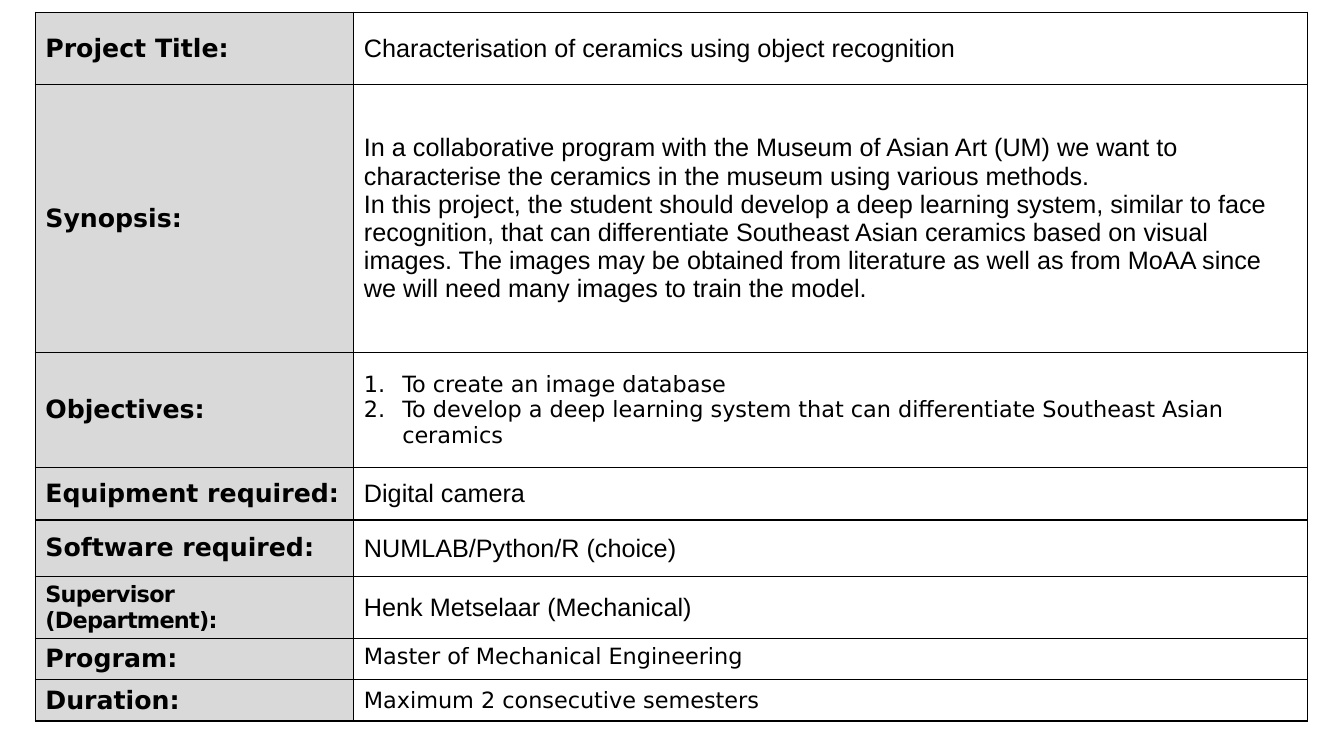
from lxml import etree
from pptx import Presentation
from pptx import util as u
from pptx.dml.color import RGBColor
from pptx.enum import text
from pptx.oxml import ns

BLACK = RGBColor(0x00, 0x00, 0x00)
LABEL_GREY = RGBColor(0xD9, 0xD9, 0xD9)
LABEL_FONT = "DejaVu Sans"
BODY_FONT = "Arial"
MIDDLE, TOP = text.MSO_ANCHOR.MIDDLE, text.MSO_ANCHOR.TOP

SYNOPSIS = [
    "In a collaborative program with the Museum of Asian Art (UM) we want to "
    "characterise the ceramics in the museum using various methods.",
    "In this project, the student should develop a deep learning system, similar "
    "to face recognition, that can differentiate Southeast Asian ceramics based "
    "on visual images. The images may be obtained from literature as well as from "
    "MoAA since we will need many images to train the model.",
]
OBJECTIVES = [
    "To create an image database",
    "To develop a deep learning system that can differentiate Southeast Asian ceramics",
]
BODY = {"font": BODY_FONT, "size": 18}
SMALL = {"font": LABEL_FONT, "size": 16}
PROJECT = [
    (0.72, "Project Title:", ["Characterisation of ceramics using object recognition"], BODY),
    (2.66, "Synopsis:", SYNOPSIS, BODY),
    (1.14, "Objectives:", OBJECTIVES, {**SMALL, "numbered": True}),
    (0.52, "Equipment required:", ["Digital camera"], BODY),
    (0.56, "Software required:", ["NUMLAB/Python/R (choice)"], BODY),
    (0.41, "Supervisor", ["Henk Metselaar (Mechanical)"], BODY),
    (0.41, "Program:", ["Master of Mechanical Engineering"], {**SMALL, "anchor": TOP}),
    (0.41, "Duration:", ["Maximum 2 consecutive semesters"], SMALL),
]


class ProjectSheet:
    def __init__(self, slide):
        self.slide = slide

    def table(self, left, top, widths, heights):
        frame = self.slide.shapes.add_table(
            len(heights), len(widths), u.Inches(left), u.Inches(top),
            u.Inches(sum(widths)), u.Inches(sum(heights)))
        grid = frame.table
        grid.first_row = grid.horz_banding = False
        for column, width in zip(grid.columns, widths):
            column.width = u.Inches(width)
        for row, height in zip(grid.rows, heights):
            row.height = u.Inches(height)
        return grid

    def borders(self, cell):
        properties = cell._tc.get_or_add_tcPr()
        for side in ("a:lnL", "a:lnR", "a:lnT", "a:lnB"):
            line = etree.SubElement(properties, ns.qn(side), w=str(u.Pt(0.96)))
            fill = etree.SubElement(line, ns.qn("a:solidFill"))
            etree.SubElement(fill, ns.qn("a:srgbClr"), val=str(BLACK))

    def format_run(self, run, font, size, bold=False):
        run.font.name = font
        run.font.size = u.Pt(size)
        run.font.bold = bold
        run.font.color.rgb = BLACK

    def number(self, paragraph):
        properties = paragraph._p.get_or_add_pPr()
        indent = u.Inches(0.38)
        properties.set("marL", str(indent))
        properties.set("indent", str(-indent))
        colour = etree.SubElement(properties, ns.qn("a:buClr"))
        etree.SubElement(colour, ns.qn("a:srgbClr"), val=str(BLACK))
        etree.SubElement(properties, ns.qn("a:buAutoNum"), type="arabicPeriod")

    def label(self, cell, title):
        self.borders(cell)
        cell.fill.solid()
        cell.fill.fore_color.rgb = LABEL_GREY
        cell.vertical_anchor = MIDDLE
        cell.text_frame.text = title
        self.format_run(cell.text_frame.paragraphs[0].runs[0], LABEL_FONT, 18, True)

    def supervisor_label(self, cell):
        paragraph = cell.text_frame.paragraphs[0]
        for part in (" ", "(Department):"):
            paragraph.add_run().text = part
        for run, size in zip(paragraph.runs, (16, 5, 16)):
            self.format_run(run, LABEL_FONT, size, True)
            run._r.get_or_add_rPr().set("spc", "-50")

    def entry(self, cell, lines, font, size, numbered=False, anchor=MIDDLE):
        self.borders(cell)
        cell.fill.background()
        cell.vertical_anchor = anchor
        cell.text_frame.text = "\n".join(lines)
        for paragraph in cell.text_frame.paragraphs:
            self.format_run(paragraph.runs[0], font, size)
            if numbered:
                self.number(paragraph)


def main():
    deck = Presentation()
    deck.slide_width, deck.slide_height = u.Inches(13.33), u.Inches(7.5)
    sheet = ProjectSheet(deck.slides.add_slide(deck.slide_layouts[6]))
    details = sheet.table(0.35, 0.12, [3.16, 9.46], [height for height, *_ in PROJECT])
    for index, (_, title, lines, style) in enumerate(PROJECT):
        sheet.label(details.cell(index, 0), title)
        sheet.entry(details.cell(index, 1), lines, **style)
        if title == "Supervisor":
            sheet.supervisor_label(details.cell(index, 0))
    deck.save("out.pptx")


if __name__ == "__main__":
    main()
